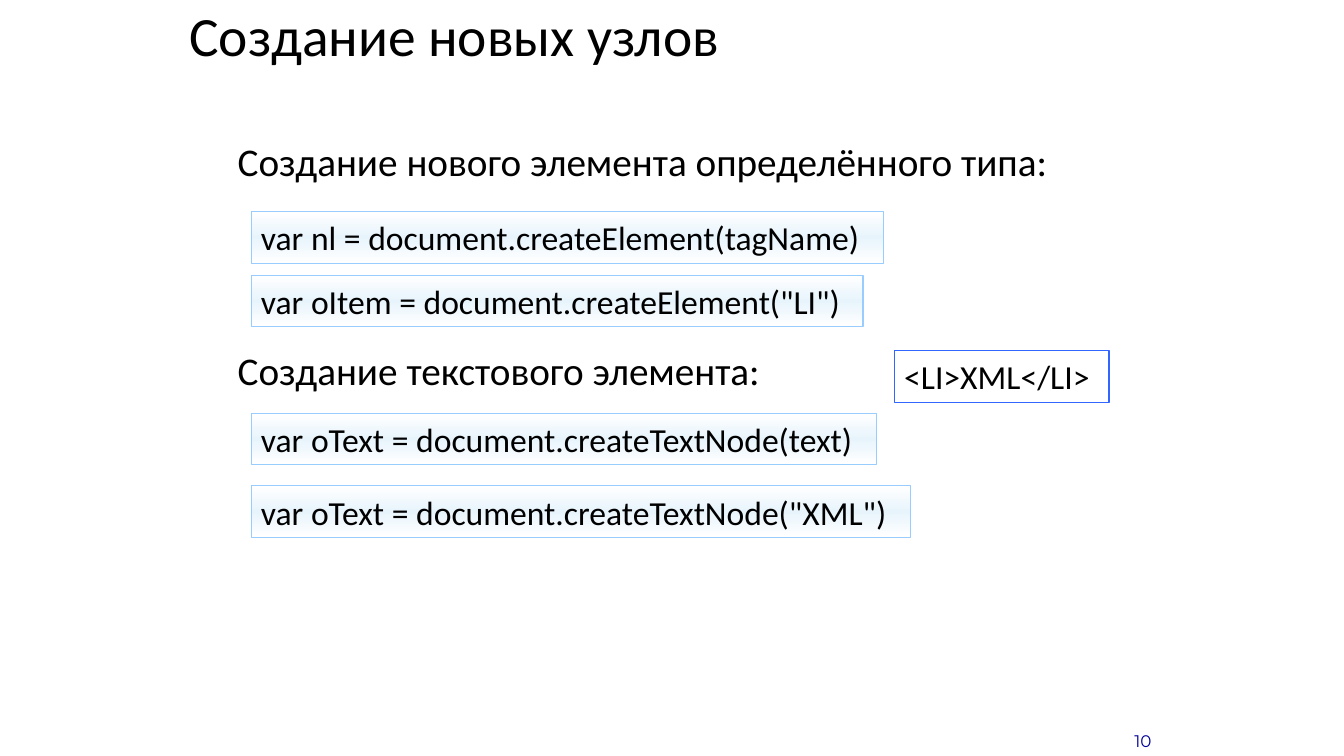
"""Build the slide about creating new DOM nodes."""
from copy import deepcopy

from pptx import Presentation
from pptx.dml.color import RGBColor
from pptx.enum.shapes import MSO_SHAPE
from pptx.enum.text import MSO_ANCHOR as ANCHOR, PP_ALIGN as ALIGN
from pptx.oxml.ns import qn
from pptx.util import Pt

PX = 9144
SLIDE_SIZE = (1333, 750)
TITLE = ("Создание новых узлов", (178, 0, 900, 76))
PAGE_NUMBER = ("10", (1100, 700, 67, 50))
HEADING_LEFT, HEADING_HEIGHT = 226, 57
HEADINGS = [
    ("Создание нового элемента определённого типа:", 131, 840),
    ("Создание текстового элемента:", 338, 543),
]
CODE_LEFT, CODE_HEIGHT = 249, 51
CODE_LINES = [
    ("var nl = document.createElement(tagName)", 210, 627),
    ('var oItem = document.createElement("LI")', 273, 607),
    ("var oText = document.createTextNode(text)", 410, 620),
    ('var oText = document.createTextNode("XML")', 482, 654),
]
RESULT = ("<LI>XML</LI>", (887, 348, 213, CODE_HEIGHT))
CODE_GRADIENT = [(0, "FFFFFF"), (0.5, "E8F4FC"), (1, "FFFFFF")]


def rgb(color):
    return RGBColor.from_string(color)


def write(box, text, size, color="000000", font="Calibri",
          anchor=ANCHOR.MIDDLE, align=ALIGN.LEFT):
    frame = box.text_frame
    frame.word_wrap = True
    frame.vertical_anchor = anchor
    frame.text = text
    para = frame.paragraphs[0]
    para.alignment = align
    span = para.runs[0].font
    span.size, span.name = Pt(size), font
    span.color.rgb = rgb(color)
    return para


def add_text(page, text, place, size, **style):
    box = page.shapes.add_textbox(*(n * PX for n in place))
    return write(box, text, size, **style)


def add_code(page, text, place, line_color, gradient=None):
    box = page.shapes.add_shape(MSO_SHAPE.RECTANGLE, *(n * PX for n in place))
    box.shadow.inherit = False
    box.line.color.rgb = rgb(line_color)
    box.line.width = Pt(0.75)
    if gradient:
        box.fill.gradient()
        box.fill.gradient_angle = 90
        stop_list = next(box.element.iter(qn("a:gsLst")))
        stop_list.append(deepcopy(stop_list[0]))
        for stop, (position, color) in zip(box.fill.gradient_stops, gradient):
            stop.position = position
            stop.color.rgb = rgb(color)
    else:
        box.fill.background()
    write(box, text, 24)


def main():
    deck = Presentation()
    deck.slide_width, deck.slide_height = (n * PX for n in SLIDE_SIZE)
    page = deck.slides.add_slide(deck.slide_layouts[6])
    add_text(page, *PAGE_NUMBER, 12, color="000099", font="Montserrat",
             anchor=ANCHOR.BOTTOM, align=ALIGN.CENTER)
    add_text(page, *TITLE, 39.6).line_spacing = 0.9
    for text, top, width in HEADINGS:
        add_text(page, text, (HEADING_LEFT, top, width, HEADING_HEIGHT), 28)
    for text, top, width in CODE_LINES:
        add_code(page, text, (CODE_LEFT, top, width, CODE_HEIGHT), "99CCFF", CODE_GRADIENT)
    add_code(page, *RESULT, "3366FF")
    deck.save("out.pptx")


if __name__ == "__main__":
    main()
